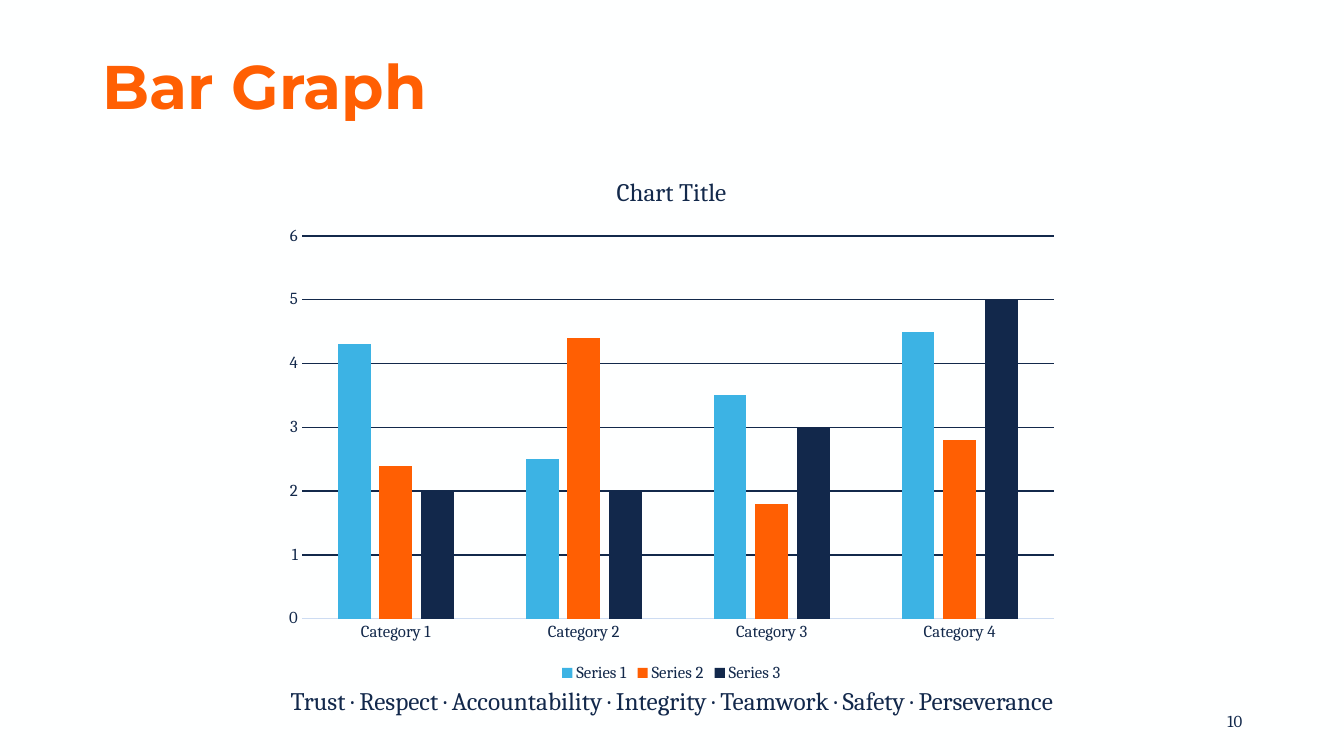
import pptx
import pptx.chart.data
import pptx.dml.color
import pptx.enum.chart
import pptx.enum.text
import pptx.util

NAVY = pptx.dml.color.RGBColor(0x12, 0x28, 0x4B)
CHART_NAVY = pptx.dml.color.RGBColor(0x13, 0x29, 0x4B)
ORANGE = pptx.dml.color.RGBColor(0xFF, 0x5F, 0x03)
SKY = pptx.dml.color.RGBColor(0x3C, 0xB3, 0xE4)
PALE_BLUE = pptx.dml.color.RGBColor(0xCD, 0xDC, 0xF2)
PAPER = pptx.dml.color.RGBColor(0xFE, 0xFF, 0xFF)

SLIDE_WIDTH = pptx.util.Inches(13.33)
SLIDE_HEIGHT = pptx.util.Inches(7.5)
HEADING_FONT = "Montserrat"
BODY_FONT = "Cambria"

CATEGORIES = [f"Category {number}" for number in range(1, 5)]
SERIES = [
    ("Series 1", (4.3, 2.5, 3.5, 4.5), SKY),
    ("Series 2", (2.4, 4.4, 1.8, 2.8), ORANGE),
    ("Series 3", (2, 2, 3, 5), NAVY),
]
VALUES = ["Trust", "Respect", "Accountability", "Integrity", "Teamwork", "Safety", "Perseverance"]


def area(left, top, width, height):
    """Turn percentages of the slide's size into left, top, width and height."""
    return (
        round(SLIDE_WIDTH * left / 100),
        round(SLIDE_HEIGHT * top / 100),
        round(SLIDE_WIDTH * width / 100),
        round(SLIDE_HEIGHT * height / 100),
    )


def style_font(font, size, color, name=BODY_FONT, bold=False):
    """Set the typeface, size, weight and colour of a font."""
    font.name = name
    font.size = pptx.util.Pt(size)
    font.bold = bold
    font.color.rgb = color


def write(frame, text, size, color=NAVY, name=BODY_FONT, bold=False,
          align=pptx.enum.text.PP_ALIGN.LEFT,
          anchor=pptx.enum.text.MSO_ANCHOR.MIDDLE, line_spacing=1.0):
    """Fill a text frame with one formatted paragraph."""
    frame.word_wrap = True
    frame.auto_size = pptx.enum.text.MSO_AUTO_SIZE.NONE
    frame.vertical_anchor = anchor
    paragraph = frame.paragraphs[0]
    paragraph.alignment = align
    paragraph.line_spacing = line_spacing
    run = paragraph.add_run()
    run.text = text
    style_font(run.font, size, color, name, bold)


def add_heading(slide, text):
    """Place and fill the slide's title placeholder."""
    heading = slide.shapes.title
    heading.left, heading.top, heading.width, heading.height = area(6.9, 5.33, 86.27, 13.07)
    write(heading.text_frame, text, 44, ORANGE, HEADING_FONT, bold=True, line_spacing=0.9)


def style_axis(axis):
    """Give an axis its label font and remove its tick marks."""
    axis.major_tick_mark = pptx.enum.chart.XL_TICK_MARK.NONE
    axis.minor_tick_mark = pptx.enum.chart.XL_TICK_MARK.NONE
    style_font(axis.tick_labels.font, 12, CHART_NAVY)


def add_bar_graph(slide):
    """Add the clustered columns with their title, axes and legend."""
    figures = pptx.chart.data.CategoryChartData()
    figures.categories = CATEGORIES
    for name, values, _ in SERIES:
        figures.add_series(name, values)
    graph = slide.shapes.add_chart(
        pptx.enum.chart.XL_CHART_TYPE.COLUMN_CLUSTERED,
        *area(20.33, 20.53, 59.26, 70.27), figures).chart
    style_font(graph.font, 10, CHART_NAVY)

    graph.has_title = True
    write(graph.chart_title.text_frame, "Chart Title", 18, CHART_NAVY)
    graph.chart_title.include_in_layout = False

    columns = graph.plots[0]
    columns.vary_by_categories = False
    columns.gap_width = 219
    columns.overlap = -27
    for series, (_, _, color) in zip(columns.series, SERIES):
        series.format.fill.solid()
        series.format.fill.fore_color.rgb = color

    style_axis(graph.category_axis)
    baseline = graph.category_axis.format.line
    baseline.color.rgb = PALE_BLUE
    baseline.width = pptx.util.Pt(0.75)

    style_axis(graph.value_axis)
    graph.value_axis.format.line.fill.background()
    gridline = graph.value_axis.major_gridlines.format.line
    gridline.color.rgb = CHART_NAVY
    gridline.width = pptx.util.Pt(1)

    graph.has_legend = True
    graph.legend.position = pptx.enum.chart.XL_LEGEND_POSITION.BOTTOM
    graph.legend.include_in_layout = False
    style_font(graph.legend.font, 12, CHART_NAVY)


def main():
    """Build the slide and save it."""
    deck = pptx.Presentation()
    deck.slide_width = SLIDE_WIDTH
    deck.slide_height = SLIDE_HEIGHT
    slide = deck.slides.add_slide(deck.slide_layouts.get_by_name("Title Only"))
    slide.background.fill.solid()
    slide.background.fill.fore_color.rgb = PAPER

    page_number = slide.shapes.add_textbox(*area(70.67, 92.67, 22.5, 5.33))
    write(page_number.text_frame, "10", 12, align=pptx.enum.text.PP_ALIGN.RIGHT)
    add_bar_graph(slide)
    add_heading(slide, "Bar Graph")
    motto = slide.shapes.add_textbox(*area(13.58, 90, 72.84, 5.33))
    write(motto.text_frame, " · ".join(VALUES), 18,
          align=pptx.enum.text.PP_ALIGN.CENTER, anchor=pptx.enum.text.MSO_ANCHOR.TOP)
    deck.save("out.pptx")


if __name__ == "__main__":
    main()
